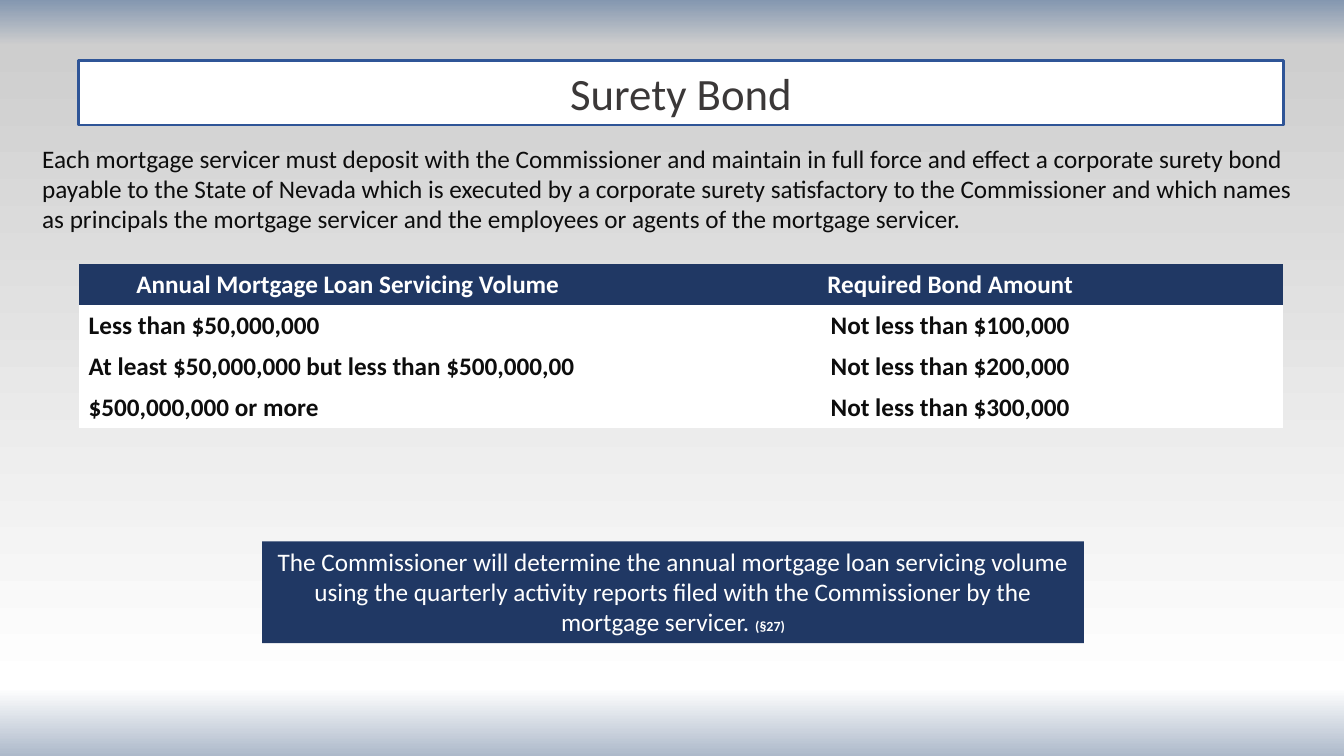
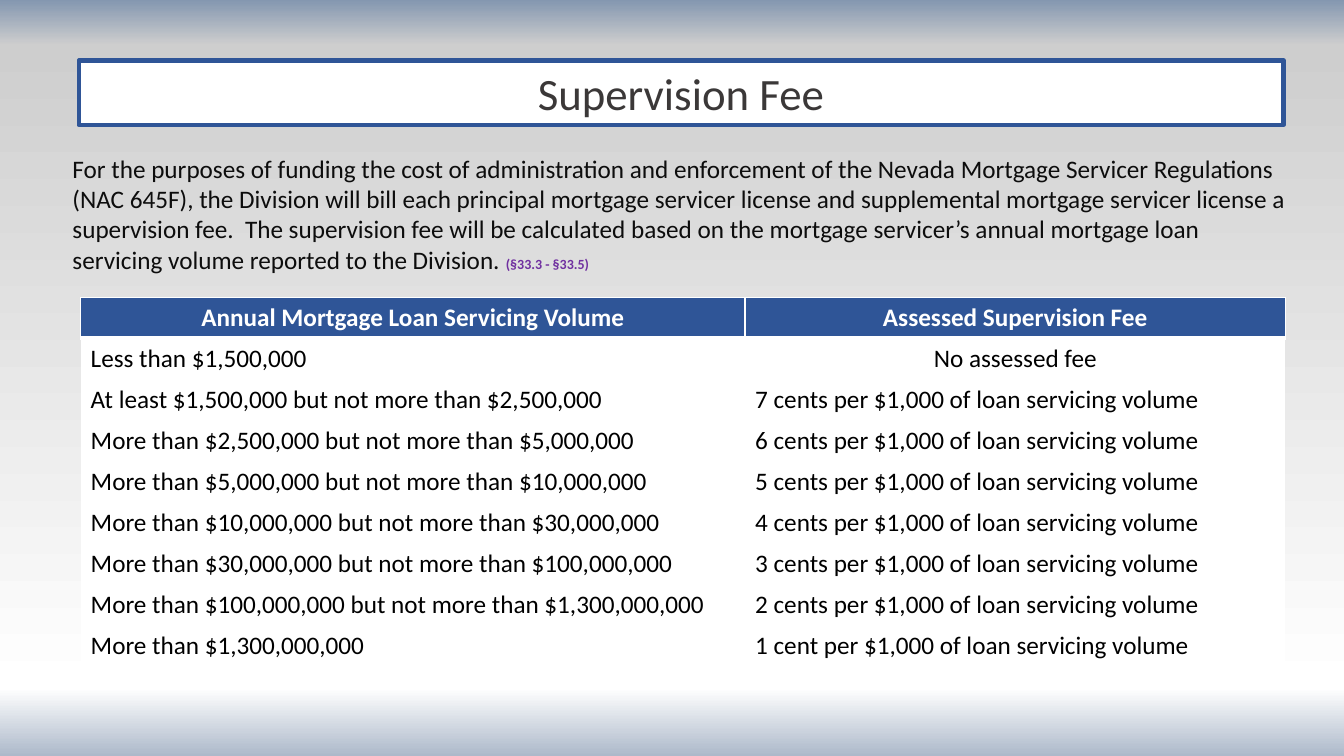
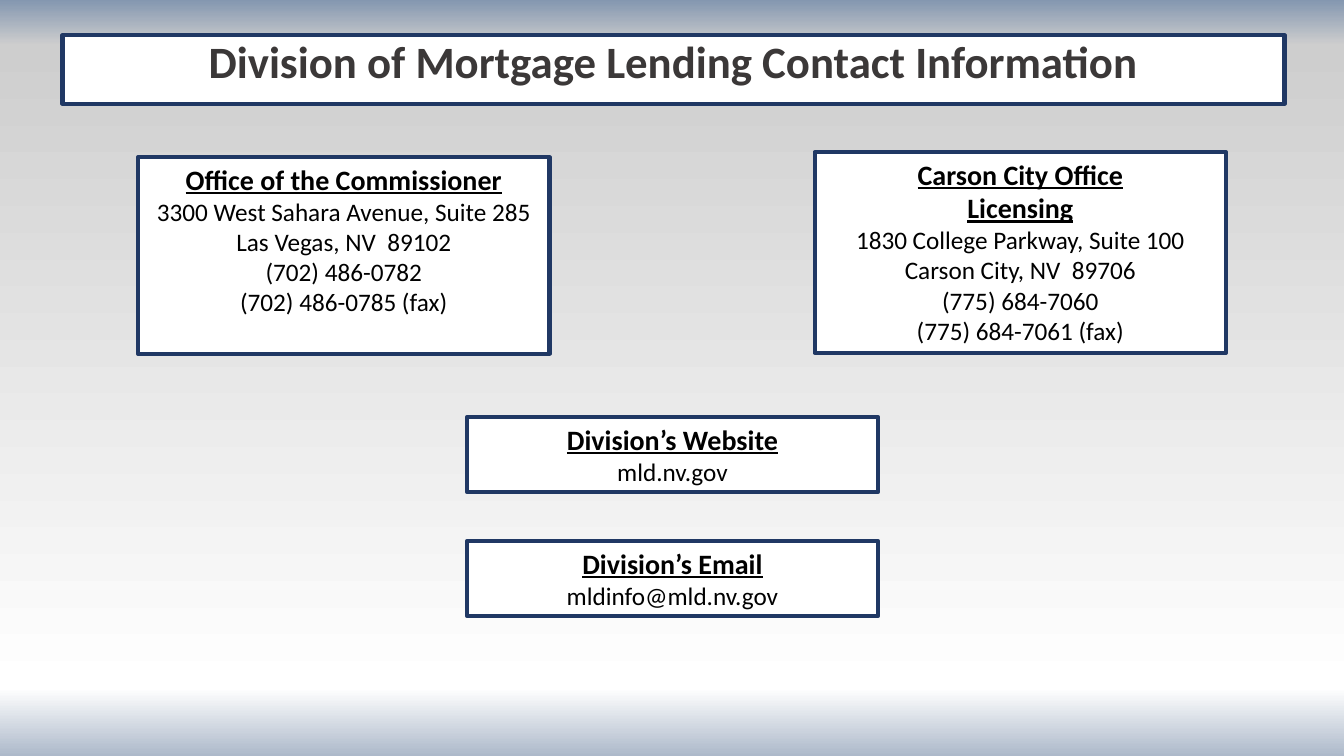
import copy

import pptx
import pptx.dml.color
import pptx.enum.shapes
import pptx.enum.text
import pptx.oxml
import pptx.oxml.ns
import pptx.util

Inches = pptx.util.Inches
Pt = pptx.util.Pt
ALIGN = pptx.enum.text.PP_ALIGN
qn = pptx.oxml.ns.qn

NO_TABLE_STYLE = "{2D5ABB26-0587-4C30-8999-92F81FD0307C}"


def rgb(value):
    return pptx.dml.color.RGBColor.from_string(value)


def add_text(p, text, size=18, color="000000", bold=False, underline=False,
             align=None, font="Calibri"):
    """Add one formatted run to a paragraph."""
    if align is not None:
        p.alignment = align
    r = p.add_run()
    r.text = text
    r.font.name = font
    r.font.size = Pt(size)
    r.font.bold = bold
    r.font.underline = underline
    r.font.color.rgb = rgb(color)


class Deck:
    NAVY = "203864"
    BLUE = "2F5597"
    WHITE = "FFFFFF"
    INK = "0D0D0D"
    TITLE = "3B3838"
    PURPLE = "7030A0"
    BACKDROP = [(0, "8497B0"), (6, "CECECE"), (91, "FFFFFF"), (100, "ADB9CA")]

    def __init__(self):
        self.prs = pptx.Presentation()
        self.prs.slide_width = Inches(13.33)
        self.prs.slide_height = Inches(7.5)
        self.s = None
        self.set_backdrop()

    def set_backdrop(self):
        """Give the master the vertical gradient that every slide inherits."""
        master = self.prs.slide_master
        fill = master.background.fill
        fill.gradient()
        fill.gradient_angle = 270
        stops = master.element.find(".//" + qn("a:gsLst"))
        for _ in range(len(self.BACKDROP) - len(stops)):
            stops.append(copy.deepcopy(stops[-1]))
        for stop, (position, color) in zip(fill.gradient_stops, self.BACKDROP):
            stop.position = position / 100
            stop.color.rgb = rgb(color)

    def new_slide(self):
        self.s = self.prs.slides.add_slide(self.prs.slide_layouts[6])

    def box(self, x, y, w, h, fill=WHITE, line=None, weight=3):
        """Add a rectangle and return its text frame."""
        sp = self.s.shapes.add_shape(pptx.enum.shapes.MSO_SHAPE.RECTANGLE,
                                     Inches(x), Inches(y), Inches(w), Inches(h))
        sp.shadow.inherit = False
        sp.fill.solid()
        sp.fill.fore_color.rgb = rgb(fill)
        if line:
            sp.line.color.rgb = rgb(line)
            sp.line.width = Pt(weight)
        else:
            sp.line.fill.background()
        tf = sp.text_frame
        tf.word_wrap = True
        tf.vertical_anchor = pptx.enum.text.MSO_ANCHOR.TOP
        return tf

    def title(self, text, x=0.78, y=0.6, w=11.95, h=0.64, line=BLUE, weight=3,
              bold=False, spacing=None):
        p = self.box(x, y, w, h, line=line, weight=weight).paragraphs[0]
        p.line_spacing = spacing
        add_text(p, text, size=32, color=self.TITLE, bold=bold, align=ALIGN.CENTER)

    def body(self, text, x, y, w, h):
        """Add a plain text box and return its paragraph."""
        tf = self.s.shapes.add_textbox(Inches(x), Inches(y),
                                       Inches(w), Inches(h)).text_frame
        tf.word_wrap = True
        add_text(tf.paragraphs[0], text, color=self.INK)
        return tf.paragraphs[0]

    def contact(self, x, y, h, headings, details):
        tf = self.box(x, y, 4.08, h, line=self.NAVY)
        for i, text in enumerate(headings + details):
            p = tf.add_paragraph() if i else tf.paragraphs[0]
            heading = i < len(headings)
            add_text(p, text, size=20 if heading else 18, bold=heading,
                     underline=heading, align=ALIGN.CENTER)

    def border(self, cell, side, weight):
        cell._tc.get_or_add_tcPr().append(pptx.oxml.parse_xml(
            f'<a:ln{side} xmlns:a="http://schemas.openxmlformats.org/drawingml/2006/main"'
            f' w="{Pt(weight)}"><a:solidFill><a:srgbClr val="{self.WHITE}"/>'
            f'</a:solidFill></a:ln{side}>'))

    def table(self, x, y, widths, rows, head_fill, color, bold, centred, bordered=False):
        """Add a table; centred tells which body cells (row, column) are centred."""
        row_h = 0.407
        frame = self.s.shapes.add_table(len(rows), len(widths), Inches(x), Inches(y),
                                        Inches(sum(widths)), Inches(row_h * len(rows)))
        table = frame.table
        table.horz_banding = False
        table._tbl.tblPr.find(qn("a:tableStyleId")).text = NO_TABLE_STYLE
        for column, width in zip(table.columns, widths):
            column.width = Inches(width)
        for i, row in enumerate(rows):
            head = i == 0
            for j, text in enumerate(row):
                cell = table.cell(i, j)
                if head and bordered:
                    for side in "LRTB":
                        self.border(cell, side, 3 if side == "B" else 1)
                cell.fill.solid()
                cell.fill.fore_color.rgb = rgb(head_fill if head else self.WHITE)
                add_text(cell.text_frame.paragraphs[0], text, bold=head or bold,
                         color=self.WHITE if head else color,
                         align=ALIGN.CENTER if head or centred(i, j) else ALIGN.LEFT)


def surety_bond(d):
    d.new_slide()
    d.title("Surety Bond", weight=2)
    d.body("Each mortgage servicer must deposit with the Commissioner and maintain in "
           "full force and effect a corporate surety bond payable to the State of Nevada "
           "which is executed by a corporate surety satisfactory to the Commissioner and "
           "which names as principals the mortgage servicer and the employees or agents "
           "of the mortgage servicer.", 0.32, 1.37, 12.67, 1.01)
    # Closing note
    p = d.box(2.6, 5.37, 8.15, 1.01, fill=d.NAVY).paragraphs[0]
    add_text(p, "The Commissioner will determine the annual mortgage loan servicing volume "
             "using the quarterly activity reports filed with the Commissioner by the "
             "mortgage servicer. ", color=d.WHITE, align=ALIGN.CENTER)
    add_text(p, "(§27)", size=10, color=d.WHITE, bold=True)
    # Bond amounts
    d.table(0.78, 2.62, [5.34, 6.61], [
        ("Annual Mortgage Loan Servicing Volume", "Required Bond Amount"),
        ("Less than $50,000,000", "Not less than $100,000"),
        ("At least $50,000,000 but less than $500,000,00", "Not less than $200,000"),
        ("$500,000,000 or more", "Not less than $300,000"),
    ], d.NAVY, d.INK, True, lambda i, j: j == 1)


def supervision_fee(d):
    d.new_slide()
    d.title("Supervision Fee")
    p = d.body("For the purposes of funding the cost of administration and enforcement of "
               "the Nevada Mortgage Servicer Regulations (NAC 645F), the Division will bill "
               "each principal mortgage servicer license and supplemental mortgage servicer "
               "license a supervision fee.  The supervision fee will be calculated based on "
               "the mortgage servicer’s annual mortgage loan servicing volume reported to "
               "the Division. ", 0.62, 1.47, 12.31, 1.92)
    add_text(p, "(§33.3 - §33.5)", size=10, color=d.PURPLE, bold=True)
    # Fee scale: each band starts where the one before ends
    limits = ["1,500,000", "2,500,000", "5,000,000", "10,000,000", "30,000,000",
              "100,000,000", "1,300,000,000"]
    rows = [("Annual Mortgage Loan Servicing Volume", "Assessed Supervision Fee"),
            (f"Less than ${limits[0]}", "No assessed fee")]
    for i, (low, high) in enumerate(zip(limits, limits[1:])):
        start = "More than" if i else "At least"
        rows.append((f"{start} ${low} but not more than ${high}",
                     f"{7 - i} cents per $1,000 of loan servicing volume"))
    rows.append((f"More than ${limits[-1]}", "1 cent per $1,000 of loan servicing volume"))
    d.table(0.8, 2.95, [6.59, 5.36], rows, d.BLUE, "000000", False,
            lambda i, j: (i, j) == (1, 1), bordered=True)


def contact_information(d):
    d.new_slide()
    d.title("Division of Mortgage Lending Contact Information", 0.62, 0.35, 12.12, 0.68,
            line=d.NAVY, bold=True, spacing=0.9)
    # Offices
    d.contact(1.37, 1.56, 1.95, ["Office of the Commissioner"],
              ["3300 West Sahara Avenue, Suite 285", "Las Vegas, NV  89102",
               "(702) 486-0782", "(702) 486-0785 (fax)"])
    d.contact(8.08, 1.51, 1.99, ["Carson City Office", "Licensing"],
              ["1830 College Parkway, Suite 100", "Carson City, NV  89706",
               "(775) 684-7060", "(775) 684-7061 (fax)"])
    # Online
    d.contact(4.63, 4.14, 0.74, ["Division’s Website"], ["mld.nv.gov"])
    d.contact(4.63, 5.37, 0.74, ["Division’s Email"], ["mldinfo@mld.nv.gov"])


def main():
    d = Deck()
    surety_bond(d)
    supervision_fee(d)
    contact_information(d)
    d.prs.save("out.pptx")


if __name__ == "__main__":
    main()
